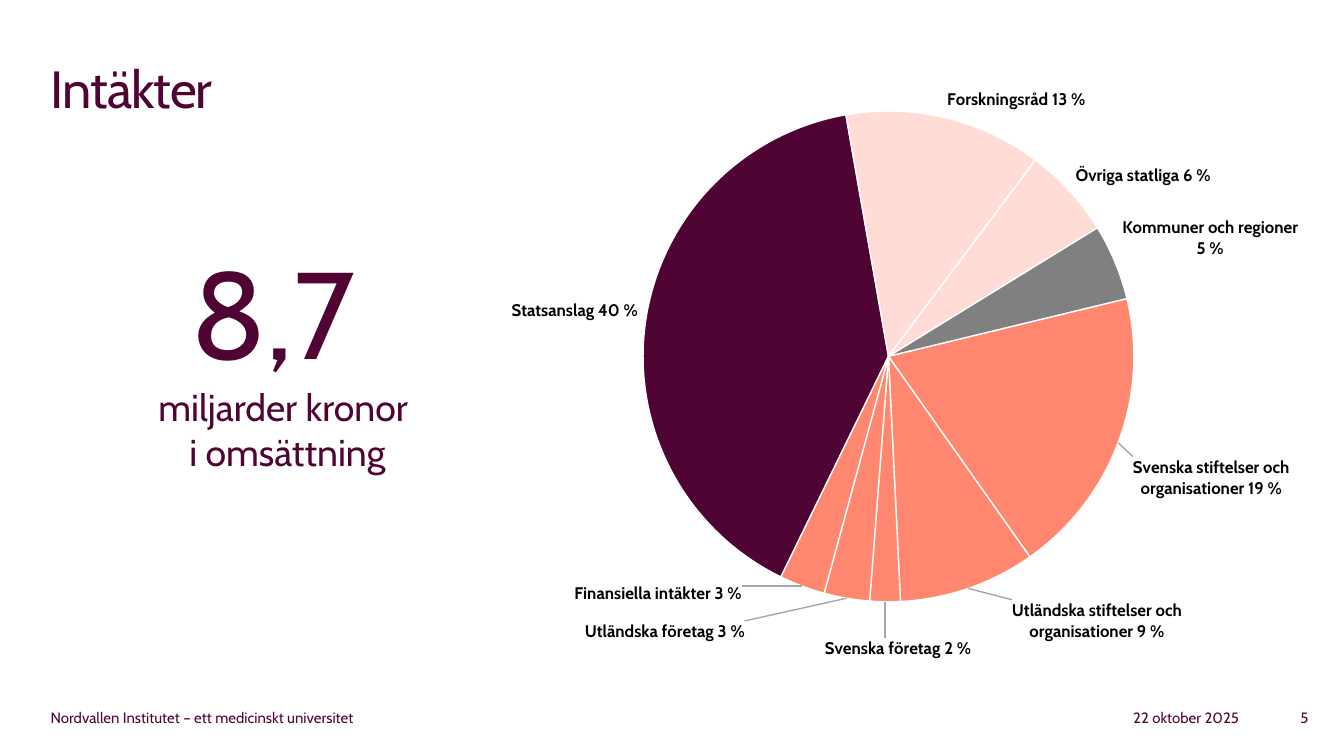
import pptx
import pptx.chart.data
import pptx.dml.color
import pptx.enum.chart
import pptx.enum.text
import pptx.oxml
import pptx.oxml.ns
import pptx.util

Pt = pptx.util.Pt
RGB = pptx.dml.color.RGBColor
ALIGN = pptx.enum.text.PP_ALIGN
ANCHOR = pptx.enum.text.MSO_ANCHOR
OUTSIDE = pptx.enum.chart.XL_LABEL_POSITION.OUTSIDE_END
qn = pptx.oxml.ns.qn

PLUM = RGB(0x4F, 0x04, 0x33)
PINK = RGB(0xFF, 0xDD, 0xD6)
GREY = RGB(0x80, 0x80, 0x80)
CORAL = RGB(0xFF, 0x87, 0x6F)
WHITE = RGB(0xFF, 0xFF, 0xFF)
BLACK = RGB(0, 0, 0)
FONT = "Cabin"

# Category, share, colour, label shift from its normal place in points
INCOME = [
    ("Statsanslag 40 %", 40, PLUM, None),
    ("Forskningsråd 13 %", 13, PINK, None),
    ("Övriga statliga 6 %", 6, PINK, None),
    ("Kommuner och regioner 5 %", 5, GREY, None),
    ("Svenska stiftelser och organisationer 19 %", 19, CORAL, (4, 6)),
    ("Utländska stiftelser och organisationer 9 %", 9, CORAL, (22, 2)),
    ("Svenska företag 2 %", 2, CORAL, (7, 15)),
    ("Utländska företag 3 %", 3, CORAL, (-54, 8)),
    ("Finansiella intäkter 3 %", 3, CORAL, (-31, -6)),
]
START_ANGLE = 206
PIE_BOX = (102, 24, 263, 263)  # within the chart


def style(font, size, color=PLUM, bold=False):
    font.name, font.size, font.bold = FONT, Pt(size), bold
    font.color.rgb = color


def place(shape, box):
    shape.left, shape.top, shape.width, shape.height = map(Pt, box)


def add_title(s, box, text):
    sp = s.shapes.title
    place(sp, box)
    tf = sp.text_frame
    tf.text = text
    tf.vertical_anchor = ANCHOR.TOP
    p = tf.paragraphs[0]
    p.alignment = ALIGN.LEFT
    r = p.runs[0]
    style(r.font, 28)
    r.font._element.set("spc", "-50")


def add_text(s, box, text, sizes, align, anchor=ANCHOR.MIDDLE):
    """Add one paragraph; sizes gives the font size of each of its lines."""
    tf = s.shapes.add_textbox(*map(Pt, box)).text_frame
    tf.word_wrap = True
    tf.vertical_anchor = anchor
    p = tf.paragraphs[0]
    p.text = text
    p.alignment = align
    for r, size in zip(p.runs, sizes):
        style(r.font, size)


def add_footer(s, box):
    left, top, width, height = box
    add_text(s, (left, top, 221, height),
             "Nordvallen Institutet – ett medicinskt universitet", [8], ALIGN.LEFT)
    add_text(s, (521, top, 150, height), "22 oktober 2025", [8], ALIGN.RIGHT)
    add_text(s, (left + width - 54, top, 54, height), "5", [8], ALIGN.RIGHT)


def make_layout(x, y, size=None):
    """Return a manual chart layout, all values as parts of the chart."""
    tags = []
    if size:
        tags += [("layoutTarget", "inner"), ("xMode", "edge"), ("yMode", "edge")]
    tags += [("x", round(x, 4)), ("y", round(y, 4))]
    if size:
        tags += [("w", round(size[0], 4)), ("h", round(size[1], 4))]
    inner = "".join(f'<c:{tag} val="{val}"/>' for tag, val in tags)
    return pptx.oxml.parse_xml(
        f'<c:layout {pptx.oxml.ns.nsdecls("c")}>'
        f"<c:manualLayout>{inner}</c:manualLayout></c:layout>")


def label_slice(point, shift, width, height):
    label = point.data_label
    style(label.font, 9, BLACK, bold=True)
    label.position = OUTSIDE
    dlbl = label._dLbl
    dlbl.find(qn("c:showVal")).set("val", "0")
    dlbl.find(qn("c:showCatName")).set("val", "1")
    if shift:
        dlbl.insert(1, make_layout(shift[0] / width, shift[1] / height))


def add_leader_lines(labels):
    labels._element.append(pptx.oxml.parse_xml(
        f'<c:leaderLines {pptx.oxml.ns.nsdecls("c", "a")}><c:spPr><a:ln w="9525">'
        '<a:solidFill><a:srgbClr val="A6A6A6"/></a:solidFill>'
        "</a:ln></c:spPr></c:leaderLines>"))


def add_income_pie(s, box):
    width, height = box[2:]
    data = pptx.chart.data.CategoryChartData()
    data.categories = [row[0] for row in INCOME]
    data.add_series("Series 1", [row[1] for row in INCOME])
    chart = s.shapes.add_chart(
        pptx.enum.chart.XL_CHART_TYPE.PIE, *map(Pt, box), data).chart
    chart.has_legend = chart.has_title = False
    style(chart.font, 10, BLACK)

    plot = chart.plots[0]
    plot.vary_by_categories = True
    pie = plot._element
    angle = pie.find(qn("c:firstSliceAng"))
    if angle is None:
        angle = pptx.oxml.parse_xml(
            f'<c:firstSliceAng {pptx.oxml.ns.nsdecls("c")}/>')
        pie.append(angle)
    angle.set("val", str(START_ANGLE))

    area = pie.getparent()
    for old in area.findall(qn("c:layout")):
        area.remove(old)
    x, y, w, h = PIE_BOX
    area.insert(0, make_layout(x / width, y / height, (w / width, h / height)))

    series = plot.series[0]
    labels = series.data_labels
    labels.show_value, labels.show_category_name = False, True
    labels.position = OUTSIDE
    style(labels.font, 9, BLACK, bold=True)
    for i, (_, _, color, shift) in enumerate(INCOME):
        point = series.points[i]
        point.format.fill.solid()
        point.format.fill.fore_color.rgb = color
        point.format.line.color.rgb = WHITE
        point.format.line.width = Pt(0.75)
        label_slice(point, shift, width, height)
    add_leader_lines(labels)


def main():
    prs = pptx.Presentation()
    prs.slide_width, prs.slide_height = Pt(720), Pt(405)
    s = prs.slides.add_slide(prs.slide_layouts[5])
    add_title(s, (20, 26.5, 680, 68), "Intäkter")
    add_text(s, (22, 123, 264, 135), "8,7 \vmiljarder kronor \vi omsättning",
             [66, 20, 20], ALIGN.CENTER, ANCHOR.TOP)
    add_income_pie(s, (242.5, 35.5, 480, 320))
    add_footer(s, (20, 377.5, 688, 14))
    prs.save("out.pptx")


if __name__ == "__main__":
    main()
